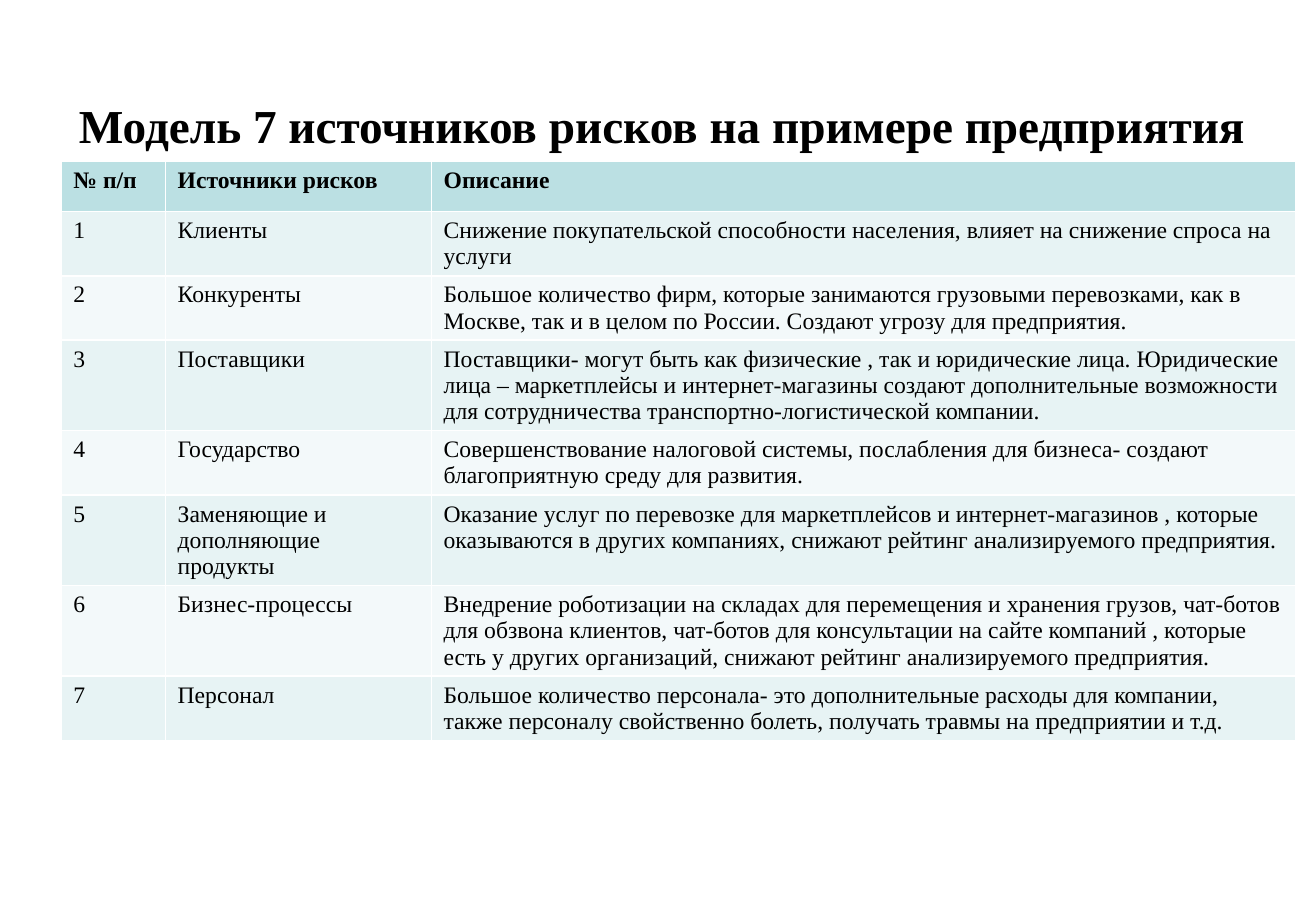
from pptx import Presentation
from pptx.dml.color import RGBColor
from pptx.enum.text import MSO_ANCHOR, PP_ALIGN
from pptx.util import Cm, Pt

FONT = "Times New Roman"
BLACK = RGBColor(0x00, 0x00, 0x00)
HEADER_FILL = RGBColor(0xBB, 0xE0, 0xE3)
ODD_FILL = RGBColor(0xE7, 0xF3, 0xF4)
EVEN_FILL = RGBColor(0xF3, 0xF9, 0xFA)

ROWS = [
    ("№ п/п", "Источники рисков", "Описание"),
    ("1", "Клиенты",
     "Снижение покупательской способности населения, влияет на снижение спроса на услуги"),
    ("2", "Конкуренты",
     "Большое количество фирм, которые занимаются грузовыми перевозками, как в Москве, "
     "так и в целом по России. Создают угрозу для предприятия."),
    ("3", "Поставщики",
     "Поставщики- могут быть как физические , так и юридические лица. Юридические лица – "
     "маркетплейсы и интернет-магазины создают дополнительные возможности для "
     "сотрудничества транспортно-логистической компании."),
    ("4", "Государство",
     "Совершенствование налоговой системы, послабления для бизнеса- создают "
     "благоприятную среду для развития."),
    ("5", "Заменяющие и дополняющие продукты",
     "Оказание услуг по перевозке для маркетплейсов и интернет-магазинов , которые "
     "оказываются в других компаниях, снижают рейтинг анализируемого предприятия."),
    ("6", "Бизнес-процессы",
     "Внедрение роботизации на складах для перемещения и хранения грузов, чат-ботов для "
     "обзвона клиентов, чат-ботов для консультации на сайте компаний , которые есть у "
     "других организаций, снижают рейтинг анализируемого предприятия."),
    ("7", "Персонал",
     "Большое количество персонала- это дополнительные расходы для компании, также "
     "персоналу свойственно болеть, получать травмы на предприятии и т.д."),
]
COLUMN_WIDTHS = [2.18, 5.56, 18.06]
ROW_HEIGHT = 1.04


def set_font(para, size, bold):
    para.font.name = FONT
    para.font.size = Pt(size)
    para.font.bold = bold
    para.font.color.rgb = BLACK


deck = Presentation()
deck.slide_width, deck.slide_height = Cm(27.51), Cm(19.05)
page = deck.slides.add_slide(deck.slide_layouts[5])

title = page.shapes.title
title.left, title.top, title.width, title.height = Cm(0.15), Cm(1.78), Cm(27.36), Cm(1.78)
title_frame = title.text_frame
title_frame.text = "Модель 7 источников рисков на примере предприятия"
title_frame.vertical_anchor = MSO_ANCHOR.TOP
title_frame.margin_top = Cm(0.23)
title_frame.paragraphs[0].alignment = PP_ALIGN.CENTER
set_font(title_frame.paragraphs[0], 28, True)

# The default table style draws the white borders; rows grow to fit their text.
risks = page.shapes.add_table(
    len(ROWS), len(COLUMN_WIDTHS), Cm(1.28), Cm(3.38),
    Cm(sum(COLUMN_WIDTHS)), Cm(ROW_HEIGHT * len(ROWS))).table
for column, width in zip(risks.columns, COLUMN_WIDTHS):
    column.width = Cm(width)

for row_index, texts in enumerate(ROWS):
    is_header = row_index == 0
    row_fill = HEADER_FILL if is_header else ODD_FILL if row_index % 2 else EVEN_FILL
    for cell, text in zip(risks.rows[row_index].cells, texts):
        cell.text = text
        cell.fill.solid()
        cell.fill.fore_color.rgb = row_fill
        set_font(cell.text_frame.paragraphs[0], 14, is_header)

deck.save("out.pptx")
